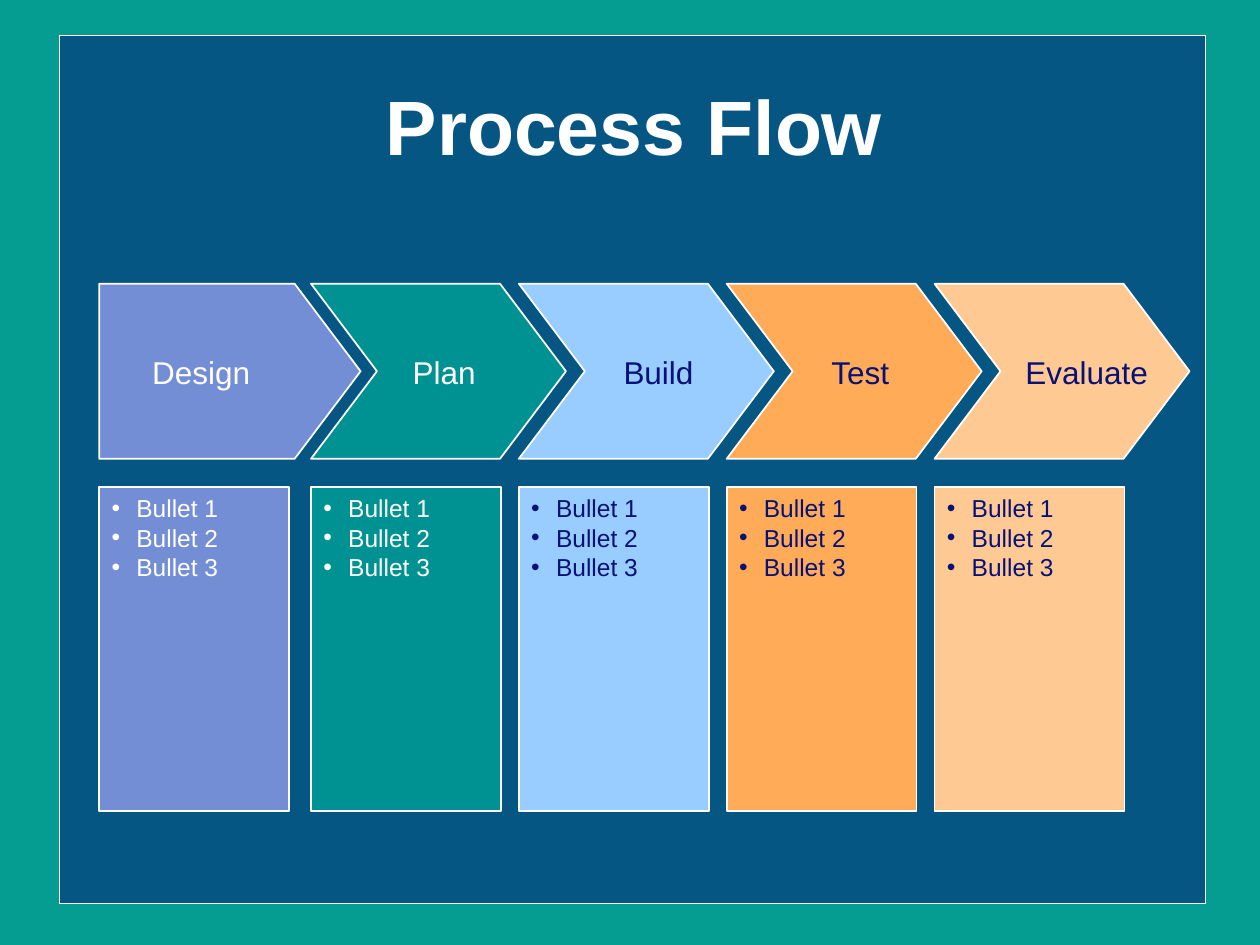
from dataclasses import dataclass

from lxml.etree import SubElement
from pptx import Presentation
from pptx.dml.color import RGBColor
from pptx.enum.shapes import MSO_SHAPE as Preset
from pptx.enum.text import MSO_ANCHOR as Anchor, MSO_AUTO_SIZE as AutoSize, PP_ALIGN as Align
from pptx.oxml.ns import qn
from pptx.util import Cm, Pt


@dataclass(frozen=True)
class Theme:
    """Colours and type sizes of the slide."""
    backdrop: str = "059D92"
    navy: str = "071176"
    white: str = "FFFFFF"
    periwinkle: str = "748ED6"
    teal: str = "009193"
    sky: str = "99CCFF"
    orange: str = "FFAB57"
    peach: str = "FFC993"
    font: str = "Arial"
    title_size: int = 44
    stage_size: int = 18
    bullet_size: int = 14


@dataclass(frozen=True)
class Stage:
    """One step of the process, with lengths in centimetres."""
    name: str
    left: float
    fill: str
    ink: str
    name_left: float
    name_width: float
    body: float = 3.81
    notch: float = 1.33


THEME = Theme()
PITCH = 4.19
SECOND_LEFT = 6.27
STAGES = [
    Stage("Design", 2, THEME.periwinkle, THEME.white, 0.82, 2.55, 3.94, 0),
    Stage("Plan", SECOND_LEFT, THEME.teal, THEME.white, 1.8, 1.85),
    Stage("Build", SECOND_LEFT + PITCH, THEME.sky, THEME.navy, 1.86, 2),
    Stage("Test", SECOND_LEFT + 2 * PITCH, THEME.orange, THEME.navy, 1.86, 1.85),
    Stage("Evaluate", SECOND_LEFT + 3 * PITCH, THEME.peach, THEME.navy, 1.58, 3.15),
]
BULLETS = ["Bullet 1", "Bullet 2", "Bullet 3"]
ARROW_TOP, ARROW_HEIGHT, ARROW_HEAD = 5.72, 3.53, 1.33


def paint(shape, fill, line_width):
    """Give a shape a flat fill and a white outline."""
    shape.shadow.inherit = False
    shape.fill.solid()
    shape.fill.fore_color.rgb = RGBColor.from_string(fill)
    shape.line.color.rgb = RGBColor.from_string(THEME.white)
    shape.line.width = Pt(line_width)


def add_run(paragraph, wording, size, ink, bold=False):
    """Append a styled run to a paragraph."""
    run = paragraph.add_run()
    run.text = wording
    run.font.name = THEME.font
    run.font.size = Pt(size)
    run.font.bold = bold
    run.font.color.rgb = RGBColor.from_string(ink)


def add_panel(slide):
    """Draw the half-transparent navy panel behind the content."""
    panel = slide.shapes.add_shape(Preset.RECTANGLE, Cm(1.2), Cm(0.71), Cm(23.11), Cm(17.51))
    paint(panel, THEME.navy, 0.75)
    tint = panel.fill._xPr.find(qn("a:solidFill"))[0]
    SubElement(tint, qn("a:alpha"), val="50000")


def add_title(slide, wording):
    """Write the centred slide title."""
    title = slide.shapes.add_textbox(Cm(1.27), Cm(0.81), Cm(23.04), Cm(3.4)).text_frame
    title.word_wrap = True
    title.vertical_anchor = Anchor.MIDDLE
    title.paragraphs[0].alignment = Align.CENTER
    add_run(title.paragraphs[0], wording, THEME.title_size, THEME.white, True)


def add_bullet_box(slide, stage):
    """Draw the box under a stage with its bulleted details."""
    box = slide.shapes.add_shape(Preset.RECTANGLE, Cm(stage.left), Cm(9.82), Cm(3.83), Cm(6.53))
    paint(box, stage.fill, 1)
    details = box.text_frame
    details.word_wrap = True
    details.vertical_anchor = Anchor.TOP
    for index, wording in enumerate(BULLETS):
        item = details.add_paragraph() if index else details.paragraphs[0]
        item.alignment = Align.LEFT
        layout = item._p.get_or_add_pPr()
        layout.set("marL", str(Cm(0.5)))
        layout.set("indent", str(-Cm(0.5)))
        SubElement(layout, qn("a:buFont"), typeface=THEME.font)
        SubElement(layout, qn("a:buChar"), char="•")
        add_run(item, wording, THEME.bullet_size, stage.ink)


def add_arrow(slide, stage):
    """Draw a stage arrow, notched on the left unless its notch is zero."""
    shoulder = stage.left + stage.body
    middle, bottom = ARROW_TOP + ARROW_HEIGHT / 2, ARROW_TOP + ARROW_HEIGHT
    corners = [(shoulder, ARROW_TOP), (shoulder + ARROW_HEAD, middle),
               (shoulder, bottom), (stage.left, bottom)]
    if stage.notch:
        corners.append((stage.left + stage.notch, middle))
    outline = slide.shapes.build_freeform(Cm(stage.left), Cm(ARROW_TOP))
    outline.add_line_segments([(Cm(x), Cm(y)) for x, y in corners], close=True)
    paint(outline.convert_to_shape(), stage.fill, 1)


def add_stage_name(slide, stage):
    """Write the stage name over its arrow."""
    name = slide.shapes.add_textbox(
        Cm(stage.left + stage.name_left), Cm(6.99), Cm(stage.name_width), Cm(1.02)).text_frame
    name.word_wrap = True
    name.auto_size = AutoSize.SHAPE_TO_FIT_TEXT
    add_run(name.paragraphs[0], stage.name, THEME.stage_size, stage.ink)


def main():
    """Build and save the process flow slide."""
    deck = Presentation()
    deck.slide_width, deck.slide_height = Cm(25.4), Cm(19.05)
    slide = deck.slides.add_slide(deck.slide_layouts[6])
    slide.background.fill.solid()
    slide.background.fill.fore_color.rgb = RGBColor.from_string(THEME.backdrop)
    add_panel(slide)
    add_title(slide, "Process Flow")
    for add_part in (add_bullet_box, add_arrow, add_stage_name):
        for stage in STAGES:
            add_part(slide, stage)
    deck.save("out.pptx")


if __name__ == "__main__":
    main()
